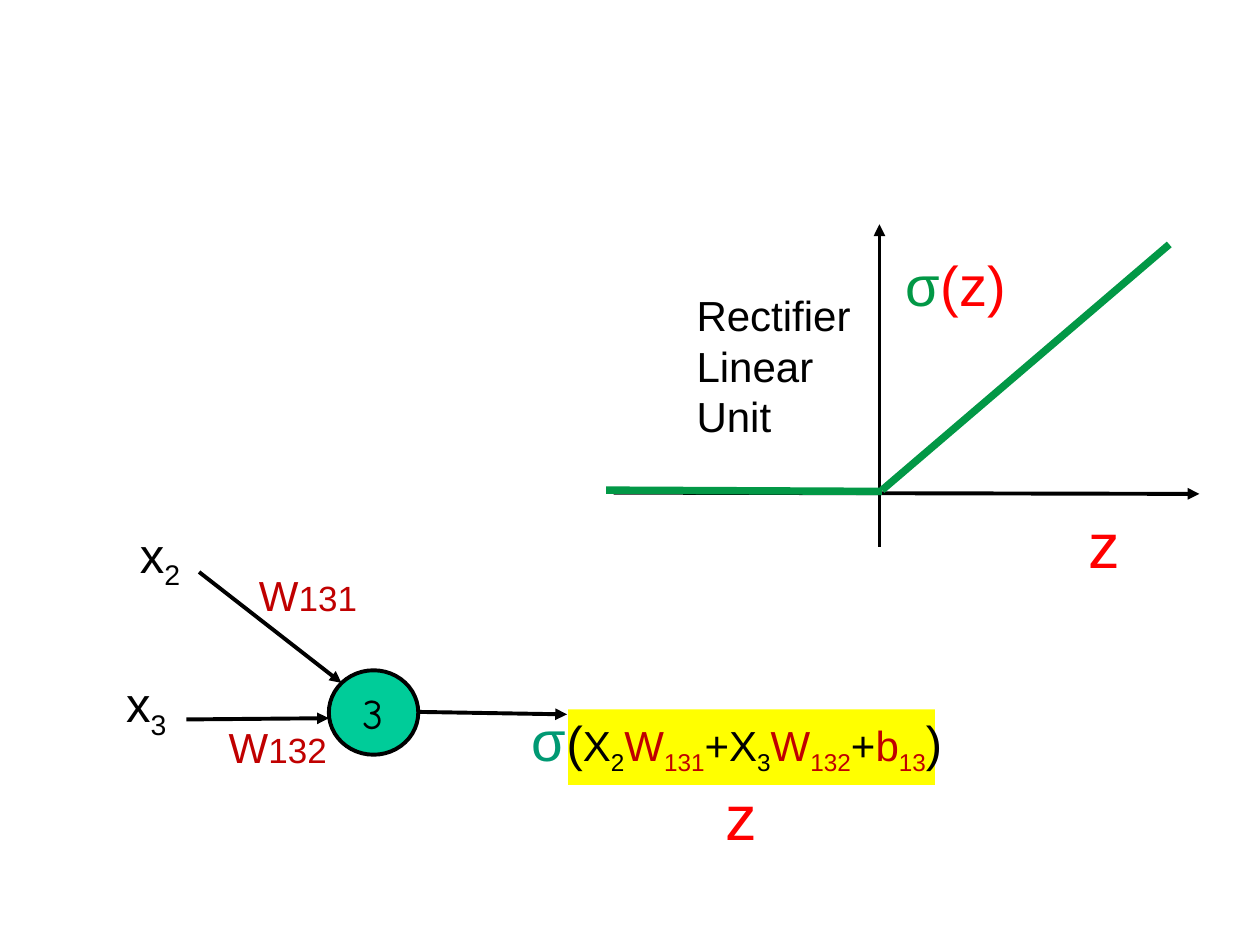
from typing import NamedTuple

from lxml.etree import SubElement
from pptx import Presentation
from pptx.dml.color import RGBColor
from pptx.enum.shapes import MSO_CONNECTOR, MSO_SHAPE
from pptx.enum.text import MSO_ANCHOR, MSO_AUTO_SIZE, PP_ALIGN
from pptx.oxml.ns import qn
from pptx.util import Inches, Pt

WIDTH, HEIGHT = Inches(10), Inches(7.5)
COLUMN, ROW = WIDTH / 100, HEIGHT / 75
COLORS = {
    "black": "000000",
    "white": "FFFFFF",
    "yellow": "FFFF00",
    "teal": "00CC99",
    "sigma": "009973",
    "green": "029846",
    "weight": "C00000",
    "red": "FF0000",
}


class Box(NamedTuple):
    column: float
    row: float
    columns: float
    rows: float


class Span(NamedTuple):
    text: str
    size: float
    color: str = "black"
    subscript: bool = False


class Segment(NamedTuple):
    start: tuple[float, float]
    end: tuple[float, float]
    color: str = "black"
    weight: float = 2.25
    arrow: bool = True


class Label(NamedTuple):
    box: Box
    lines: list[list[Span]]
    centered: bool = True
    fill: str | None = None


def rgb(name: str) -> RGBColor:
    return RGBColor.from_string(COLORS[name])


def place(box: Box) -> list[int]:
    return [round(value * unit) for value, unit in zip(box, (COLUMN, ROW) * 2)]


def write_spans(paragraph, spans: list[Span], font_name: str = "Arial") -> None:
    paragraph.font.name = font_name
    uniform_size = len({span.size for span in spans}) == 1
    uniform_color = len({span.color for span in spans}) == 1
    for index, span in enumerate(spans):
        for part_index, part in enumerate(span.text.split("\n")):
            if part_index:
                paragraph.add_line_break()
            run = paragraph.add_run()
            run.text = part
            (paragraph if uniform_size else run).font.size = Pt(span.size)
            (paragraph if uniform_color else run).font.color.rgb = rgb(span.color)
            if span.subscript:
                run._r.get_or_add_rPr().set("baseline", "-25000")


def draw_shape(slide, kind: MSO_SHAPE, box: Box, fill: str):
    shape = slide.shapes.add_shape(kind, *place(box))
    shape.shadow.inherit = False
    shape.fill.solid()
    shape.fill.fore_color.rgb = rgb(fill)
    shape.line.fill.background()
    return shape


def draw_label(slide, label: Label) -> None:
    if label.fill:
        shape = draw_shape(slide, MSO_SHAPE.RECTANGLE, label.box, label.fill)
    else:
        shape = slide.shapes.add_textbox(*place(label.box))
    frame = shape.text_frame
    frame.word_wrap = False
    frame.auto_size = MSO_AUTO_SIZE.SHAPE_TO_FIT_TEXT
    frame.vertical_anchor = MSO_ANCHOR.TOP
    for index, spans in enumerate(label.lines):
        paragraph = frame.add_paragraph() if index else frame.paragraphs[0]
        paragraph.alignment = PP_ALIGN.CENTER if label.centered else PP_ALIGN.LEFT
        write_spans(paragraph, spans)


def draw_segment(slide, segment: Segment) -> None:
    ends = place(Box(*segment.start, *segment.end))
    connector = slide.shapes.add_connector(MSO_CONNECTOR.STRAIGHT, *ends)
    connector.line.color.rgb = rgb(segment.color)
    connector.line.width = Pt(segment.weight)
    if segment.arrow:
        SubElement(connector.line._get_or_add_ln(), qn("a:tailEnd"), type="triangle")
    SubElement(connector._element.spPr, qn("a:effectLst"))


def draw_neuron(slide, box: Box, number: str) -> None:
    neuron = draw_shape(slide, MSO_SHAPE.OVAL, box, "teal")
    neuron.line.color.rgb = rgb("black")
    neuron.line.width = Pt(2.25)
    neuron.text_frame.word_wrap = False
    neuron.text_frame.vertical_anchor = MSO_ANCHOR.MIDDLE
    paragraph = neuron.text_frame.paragraphs[0]
    paragraph.alignment = PP_ALIGN.CENTER
    write_spans(paragraph, [Span(number, 24)], "Comic Neue")


def input_label(column: float, row: float, index: str) -> Label:
    return Label(Box(column, row, 5.4, 5.7), [[Span("x", 28), Span(index, 28, subscript=True)]])


def weight_label(column: float, row: float, index: str) -> Label:
    spans = [Span("W", 24, "weight"), Span(index, 20, "weight")]
    return Label(Box(column, row, 9.9, 5), [spans])


def z_label(column: float, row: float, fill: str | None = None) -> Label:
    spans = [Span(" ", 24, "red"), Span("z ", 36, "red")]
    return Label(Box(column, row, 6.9, 7.1), [spans], fill=fill)


def term(name: str, index: str, color: str = "black") -> list[Span]:
    return [Span(name, 24, color), Span(index, 24, color, True)]


FORMULA = [
    Span("σ", 32, "sigma"),
    Span("(", 28),
    *term("X", "2"),
    *term("W", "131", "weight"),
    *term("+X", "3"),
    *term("W", "132", "weight"),
    Span("+", 24),
    *term("b", "13", "weight"),
    Span(")", 28),
]
NETWORK = [
    Segment((15.8, 45.4), (27.1, 54.2)),
    input_label(8.9, 53, "3"),
    input_label(10, 41.1, "2"),
    Segment((14.8, 57.1), (26.1, 57)),
    weight_label(17.1, 56.8, "132"),
    weight_label(19.5, 44.7, "131"),
    Segment((33.2, 56.5), (45, 56.7)),
    Label(Box(40.3, 55.5, 36.4, 6.4), [FORMULA]),
]
RECTIFIER = [
    Segment((48.7, 39.1), (95.2, 39.2)),
    Segment((69.8, 43.4), (69.8, 17.8)),
    Segment((48.1, 38.9), (70, 39), "green", 4.25, False),
    Segment((92.8, 19.4), (70, 38.9), "green", 4.25, False),
    Label(Box(70.9, 19.4, 9.9, 6.4), [[Span("σ", 32, "green"), Span("(z)", 32, "red")]]),
    z_label(84.4, 39.6, "white"),
    Label(
        Box(54.3, 22.5, 14.4, 13.1),
        [[Span("Rectifier\nLinear", 24)], [Span("Unit", 24)]],
        centered=False,
    ),
]


def main() -> None:
    presentation = Presentation()
    presentation.slide_width, presentation.slide_height = WIDTH, HEIGHT
    slide = presentation.slides.add_slide(presentation.slide_layouts[6])
    draw_shape(slide, MSO_SHAPE.RECTANGLE, Box(45.1, 56.3, 29.1, 6), "yellow")
    draw_neuron(slide, Box(26.1, 53.2, 7.1, 6.7), "3")
    for element in [*NETWORK, *RECTIFIER, z_label(55.6, 61.2)]:
        if isinstance(element, Segment):
            draw_segment(slide, element)
        else:
            draw_label(slide, element)
    presentation.save("out.pptx")


if __name__ == "__main__":
    main()
